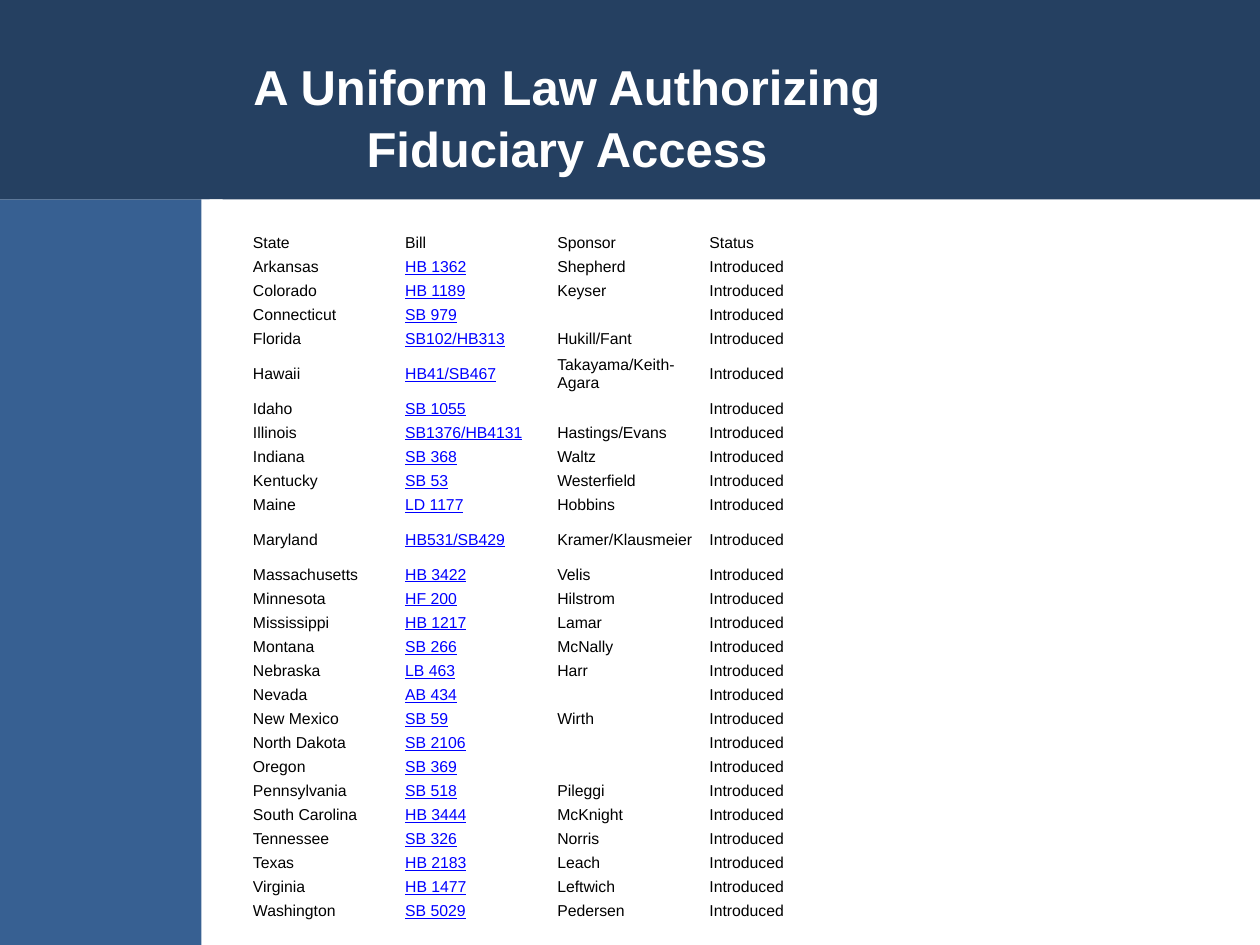
from lxml.etree import SubElement
from pptx import Presentation
from pptx.dml.color import RGBColor
from pptx.enum.shapes import MSO_SHAPE
from pptx.enum.text import MSO_ANCHOR, PP_ALIGN
from pptx.oxml.ns import qn
from pptx.util import Cm, Pt

NAVY = RGBColor(0x25, 0x40, 0x61)
BLUE = RGBColor(0x37, 0x60, 0x92)
WHITE = RGBColor(0xFF, 0xFF, 0xFF)
BLACK = RGBColor(0x00, 0x00, 0x00)
LINK_BLUE = RGBColor(0x00, 0x00, 0xFF)

SLIDE_WIDTH, SLIDE_HEIGHT = Cm(25.4), Cm(19.05)
BANNER_HEIGHT = Cm(4.02)
SIDEBAR_WIDTH = Cm(4.23)

TITLE_FORMAT = {"name": "Arial", "size": Pt(28), "bold": True}
CELL_FORMAT = {"name": "Arial", "size": Pt(9)}
BILL_FORMAT = {**CELL_FORMAT, "underline": True}

HEADINGS = ("State", "Bill", "Sponsor", "Status")
STATUS = "Introduced"
BILLS = [
    ("Arkansas", "HB 1362", "Shepherd"),
    ("Colorado", "HB 1189", "Keyser"),
    ("Connecticut", "SB 979", ""),
    ("Florida", "SB102/HB313", "Hukill/Fant"),
    ("Hawaii", "HB41/SB467", "Takayama/Keith-Agara"),
    ("Idaho", "SB 1055", ""),
    ("Illinois", "SB1376/HB4131", "Hastings/Evans"),
    ("Indiana", "SB 368", "Waltz"),
    ("Kentucky", "SB 53", "Westerfield"),
    ("Maine", "LD 1177", "Hobbins"),
    ("Maryland", "HB531/SB429", "Kramer/Klausmeier"),
    ("Massachusetts", "HB 3422", "Velis"),
    ("Minnesota", "HF 200", "Hilstrom"),
    ("Mississippi", "HB 1217", "Lamar"),
    ("Montana", "SB 266", "McNally"),
    ("Nebraska", "LB 463", "Harr"),
    ("Nevada", "AB 434", ""),
    ("New Mexico", "SB 59", "Wirth"),
    ("North Dakota", "SB 2106", ""),
    ("Oregon", "SB 369", ""),
    ("Pennsylvania", "SB 518", "Pileggi"),
    ("South Carolina", "HB 3444", "McKnight"),
    ("Tennessee", "SB 326", "Norris"),
    ("Texas", "HB 2183", "Leach"),
    ("Virginia", "HB 1477", "Leftwich"),
    ("Washington", "SB 5029", "Pedersen"),
]
TALL_STATES = ("Hawaii", "Maryland")
TALL_ROW_HEIGHT = Cm(0.92)


def format_font(font, values, color):
    for name, value in values.items():
        setattr(font, name, value)
    font.color.rgb = color


def add_panel(slide, left, top, width, height, color):
    panel = slide.shapes.add_shape(MSO_SHAPE.RECTANGLE, left, top, width, height)
    panel.shadow.inherit = False
    panel.fill.solid()
    panel.fill.fore_color.rgb = color
    panel.line.fill.background()


def add_background(slide, left, top, width, height):
    """Place the sidebar, the banner and the white strip edging the sidebar."""
    body_top = top + BANNER_HEIGHT
    body_height = height - BANNER_HEIGHT
    add_panel(slide, left, body_top, SIDEBAR_WIDTH, body_height, BLUE)
    add_panel(slide, left, top, width, BANNER_HEIGHT, NAVY)
    add_panel(slide, left + Cm(4.06), body_top, Cm(0.43), body_height, WHITE)


def add_title(slide, left, top, width, height):
    frame = slide.shapes.add_textbox(left, top, width, height).text_frame
    frame.word_wrap = True
    frame.vertical_anchor = MSO_ANCHOR.MIDDLE
    paragraph = frame.paragraphs[0]
    paragraph.text = "A Uniform Law Authorizing\vFiduciary Access"
    paragraph.alignment = PP_ALIGN.CENTER
    paragraph.line_spacing = 1.05
    for run in paragraph.runs:
        format_font(run.font, TITLE_FORMAT, WHITE)


def fill_cell(cell, text, values, color):
    cell.fill.background()
    cell.vertical_anchor = MSO_ANCHOR.MIDDLE
    for side in ("left", "right", "top", "bottom"):
        setattr(cell, f"margin_{side}", Cm(0.02))
    paragraph = cell.text_frame.paragraphs[0]
    if text:
        run = paragraph.add_run()
        run.text = text
        format_font(run.font, values, color)
    else:
        # An empty cell needs its own text size, or it stretches the row.
        SubElement(paragraph._p, qn("a:endParaRPr"), sz="900")


def add_bill_table(slide, left, top, width, height):
    rows = [HEADINGS] + [(*bill, STATUS) for bill in BILLS]
    table = slide.shapes.add_table(
        len(rows), len(HEADINGS), left, top, width, height
    ).table
    table.first_row = False
    table.horz_banding = False

    tall_total = len(TALL_STATES) * TALL_ROW_HEIGHT
    row_height = (height - tall_total) // (len(rows) - len(TALL_STATES))
    for row_index, values in enumerate(rows):
        is_tall = values[0] in TALL_STATES
        table.rows[row_index].height = TALL_ROW_HEIGHT if is_tall else row_height
        for column_index, text in enumerate(values):
            is_bill = row_index > 0 and HEADINGS[column_index] == "Bill"
            fill_cell(
                table.cell(row_index, column_index),
                text,
                BILL_FORMAT if is_bill else CELL_FORMAT,
                LINK_BLUE if is_bill else BLACK,
            )


def main():
    presentation = Presentation()
    presentation.slide_width = SLIDE_WIDTH
    presentation.slide_height = SLIDE_HEIGHT
    slide = presentation.slides.add_slide(presentation.slide_layouts[6])
    add_background(slide, 0, 0, SLIDE_WIDTH, SLIDE_HEIGHT)
    add_title(slide, 0, Cm(1.27), Cm(22.86), Cm(2.12))
    add_bill_table(slide, Cm(5.08), Cm(4.65), Cm(12.27), Cm(13.97))
    presentation.save("out.pptx")


if __name__ == "__main__":
    main()
